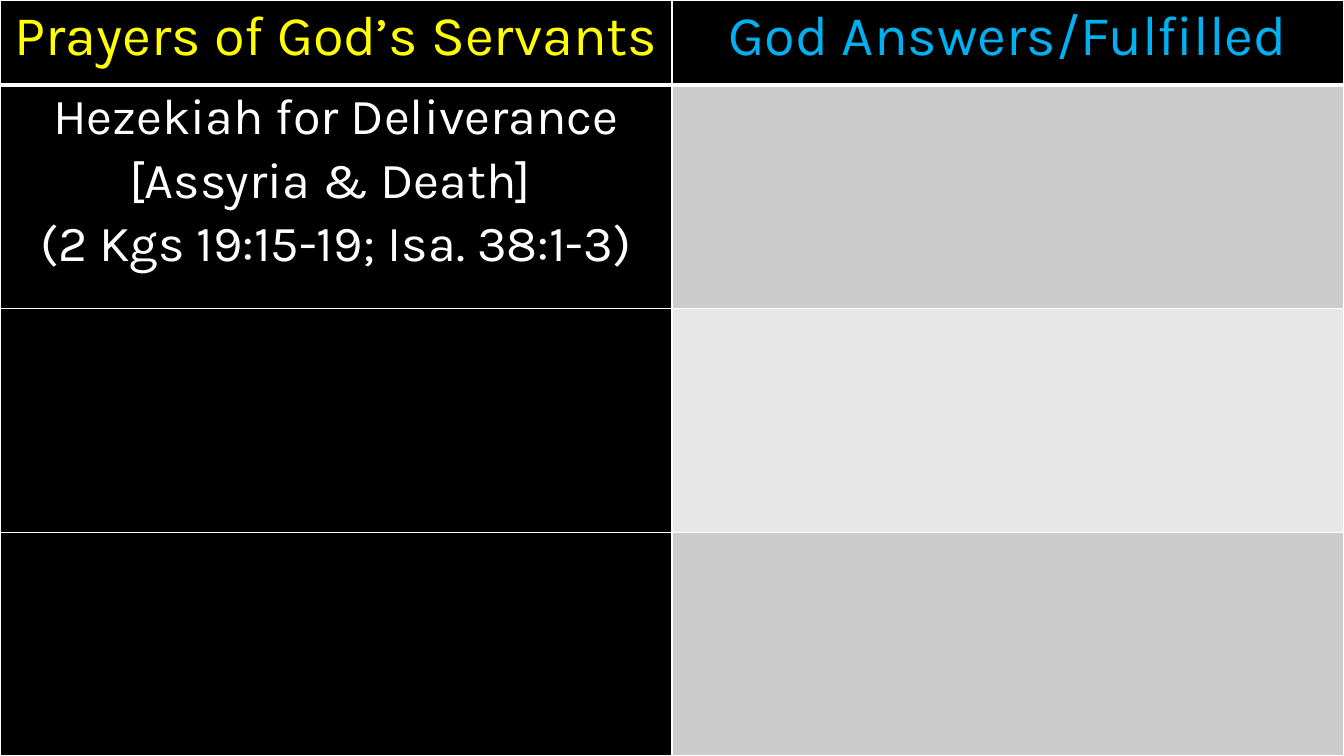
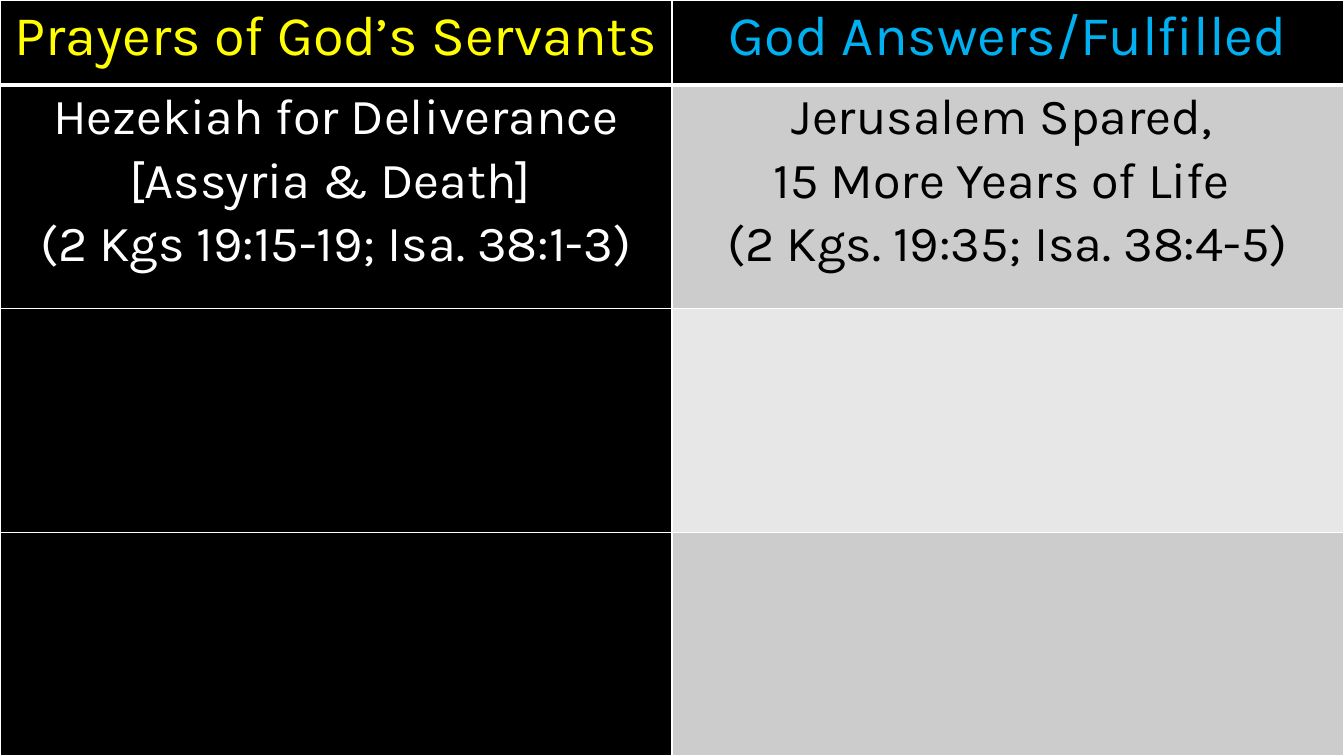
"""Build the two slides on the prayers of God's servants and their answers."""
import lxml.etree
import pptx
import pptx.dml.color
import pptx.enum.text
import pptx.oxml.ns
import pptx.util

Inches = pptx.util.Inches
Pt = pptx.util.Pt
RGBColor = pptx.dml.color.RGBColor

BLACK = RGBColor(0x00, 0x00, 0x00)
WHITE = RGBColor(0xFF, 0xFF, 0xFF)
YELLOW = RGBColor(0xFF, 0xFF, 0x00)
BLUE = RGBColor(0x00, 0xB0, 0xF0)
DARK_BAND = RGBColor(0xCC, 0xCC, 0xCC)
LIGHT_BAND = RGBColor(0xE7, 0xE7, 0xE7)

SLIDE_WIDTH = 13.33
SLIDE_HEIGHT = 7.5
HEADER_HEIGHT = 0.84
BODY_ROWS = 3
HEADINGS = (("Prayers of God’s Servants", YELLOW), ("God Answers/Fulfilled", BLUE))
PRAYER = ("Hezekiah for Deliverance [Assyria & Death] ", "(2 Kgs 19:15-19; Isa. 38:1-3)")
ANSWER = ("Jerusalem Spared, ", "15 More Years of Life ", "(2 Kgs. 19:35; Isa. 38:4-5)")


class PrayerDeck:
    """Hold the shared style and the current slide."""

    font_name = "Karla"
    heading_size = 40
    body_size = 36
    line_spacing = 1.07
    side_margin = 0.07
    thin_border = 1
    thick_border = 3

    def __init__(self):
        self.presentation = pptx.Presentation()
        self.presentation.slide_width = Inches(SLIDE_WIDTH)
        self.presentation.slide_height = Inches(SLIDE_HEIGHT)
        self.slide = None

    def add_slide(self):
        self.slide = self.presentation.slides.add_slide(self.presentation.slide_layouts[6])
        background = self.slide.background.fill
        background.solid()
        background.fore_color.rgb = BLACK

    def add_prayer_table(self, prayer, answer):
        table = self.slide.shapes.add_table(
            BODY_ROWS + 1, 2, 0, 0, Inches(SLIDE_WIDTH), Inches(SLIDE_HEIGHT)
        ).table
        body_height = (SLIDE_HEIGHT - HEADER_HEIGHT) / BODY_ROWS
        for index, row in enumerate(table.rows):
            row.height = Inches(body_height if index else HEADER_HEIGHT)
        for column, (heading, color) in enumerate(HEADINGS):
            cell = table.cell(0, column)
            self.style_cell(cell, BLACK, bottom=self.thick_border)
            self.write_cell(cell, (heading,), self.heading_size, color)
        for index in range(1, BODY_ROWS + 1):
            top = self.thick_border if index == 1 else self.thin_border
            band = DARK_BAND if index % 2 else LIGHT_BAND
            for column, fill_color in enumerate((BLACK, band)):
                self.style_cell(table.cell(index, column), fill_color, top=top)
        self.write_cell(table.cell(1, 0), prayer, self.body_size, WHITE)
        self.write_cell(table.cell(1, 1), answer, self.body_size, BLACK)

    def style_cell(self, cell, fill_color, top=thin_border, bottom=thin_border):
        cell.fill.solid()
        cell.fill.fore_color.rgb = fill_color
        cell.margin_left = cell.margin_right = Inches(self.side_margin)
        cell.margin_top = cell.margin_bottom = 0
        qualified = pptx.oxml.ns.qn
        properties = cell._tc.get_or_add_tcPr()
        borders = (("L", self.thin_border), ("R", self.thin_border), ("T", top), ("B", bottom))
        for position, (side, width) in enumerate(borders):
            line = lxml.etree.Element(qualified(f"a:ln{side}"), w=str(Pt(width)))
            solid_fill = lxml.etree.SubElement(line, qualified("a:solidFill"))
            lxml.etree.SubElement(solid_fill, qualified("a:srgbClr"), val=str(WHITE))
            properties.insert(position, line)

    def write_cell(self, cell, lines, size, color):
        text_frame = cell.text_frame
        for index, text in enumerate(lines):
            paragraph = text_frame.add_paragraph() if index else text_frame.paragraphs[0]
            paragraph.alignment = pptx.enum.text.PP_ALIGN.CENTER
            paragraph.line_spacing = self.line_spacing
            run = paragraph.add_run()
            run.text = text
            run.font.name = self.font_name
            run.font.size = Pt(size)
            run.font.bold = False
            run.font.color.rgb = color


def main():
    deck = PrayerDeck()
    for answer in ((), ANSWER):
        deck.add_slide()
        deck.add_prayer_table(PRAYER, answer)
    deck.presentation.save("out.pptx")


if __name__ == "__main__":
    main()
